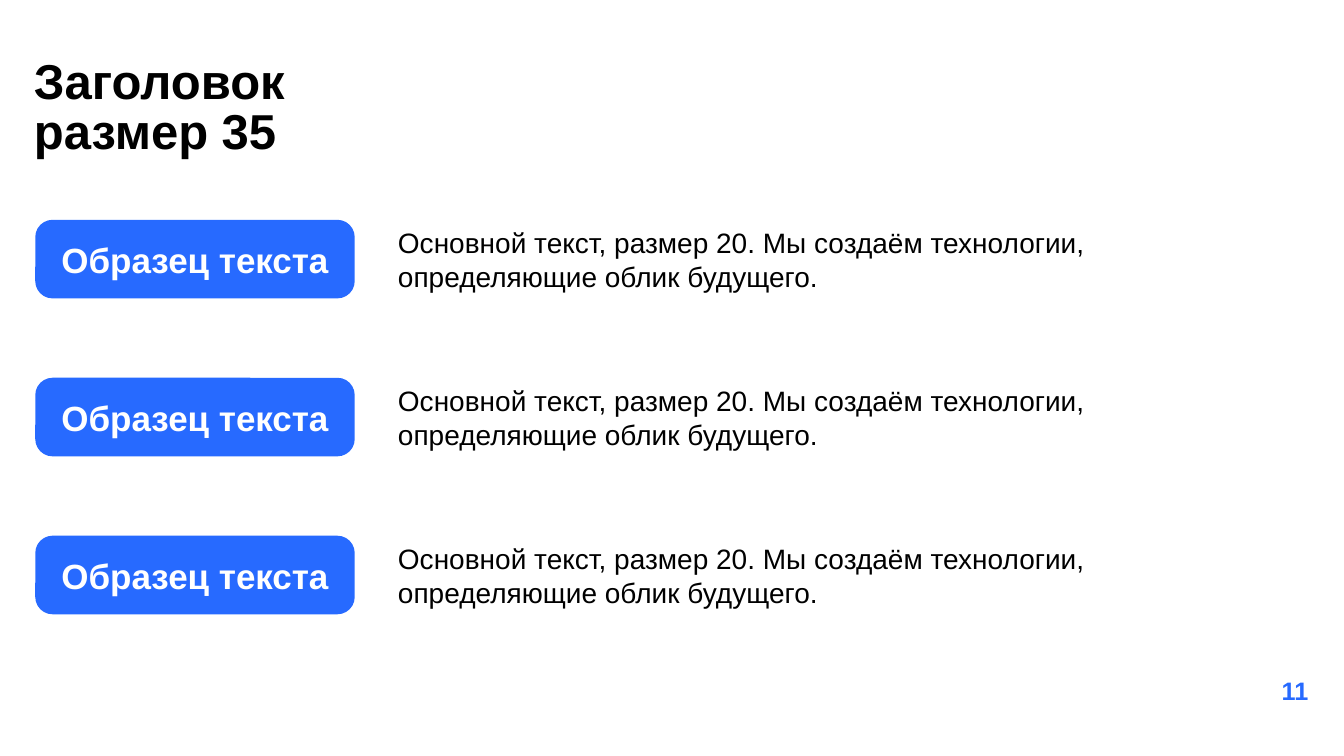
from pptx import Presentation
from pptx import util as u
from pptx.dml.color import RGBColor
from pptx.enum import shapes, text

HEADING = "Заголовок\vразмер 35"
BODY = "Основной текст, размер 20. Мы создаём технологии, \vопределяющие облик будущего."
ROWS = [("Образец текста", BODY)] * 3
PAGE = "11"
COLORS = {"text": "000000", "accent": "276AFF", "label": "FFFFFF"}

LEFT, TOP, STEP = 0.89, 5.54, 3.98
LABEL_WIDTH, ROW_HEIGHT = 8.05, 1.98
BODY_LEFT, BODY_WIDTH = 9.78, 23.22


def write(box, words, size, color, bold=False, align=text.PP_ALIGN.LEFT,
          anchor=text.MSO_ANCHOR.MIDDLE):
    frame = box.text_frame
    frame.word_wrap = True
    frame.vertical_anchor = anchor
    frame.text = words
    paragraph = frame.paragraphs[0]
    paragraph.alignment = align
    font = paragraph.font
    font.name, font.size, font.bold = "Arial", u.Pt(size), bold
    font.color.rgb = RGBColor.from_string(COLORS[color])
    return paragraph


def place(left, top, width, height):
    return [u.Cm(value) for value in (left, top, width, height)]


deck = Presentation()
deck.slide_width, deck.slide_height = u.Cm(33.87), u.Cm(19.05)
slide = deck.slides.add_slide(deck.slide_layouts[5])

heading = slide.shapes.title
heading.left, heading.top, heading.width, heading.height = place(0.6, 1.37, 29.2, 3.68)
write(heading, HEADING, 35, "text", bold=True,
      anchor=text.MSO_ANCHOR.TOP).line_spacing = 0.85

for row, (label_words, body_words) in enumerate(ROWS):
    top = TOP + row * STEP
    label = slide.shapes.add_shape(shapes.MSO_SHAPE.ROUNDED_RECTANGLE,
                                   *place(LEFT, top, LABEL_WIDTH, ROW_HEIGHT))
    label.adjustments[0] = 0.22
    label.shadow.inherit = False
    label.fill.solid()
    label.fill.fore_color.rgb = RGBColor.from_string(COLORS["accent"])
    label.line.fill.background()
    write(label, label_words, 25, "label", bold=True, align=text.PP_ALIGN.CENTER)

    body = slide.shapes.add_textbox(*place(BODY_LEFT, top, BODY_WIDTH, ROW_HEIGHT))
    write(body, body_words, 20, "text").space_after = u.Pt(5)

page = slide.shapes.add_textbox(*place(25.6, 16.89, 7.62, 1.02))
write(page, PAGE, 18, "accent", bold=True, align=text.PP_ALIGN.RIGHT)

deck.save("out.pptx")
